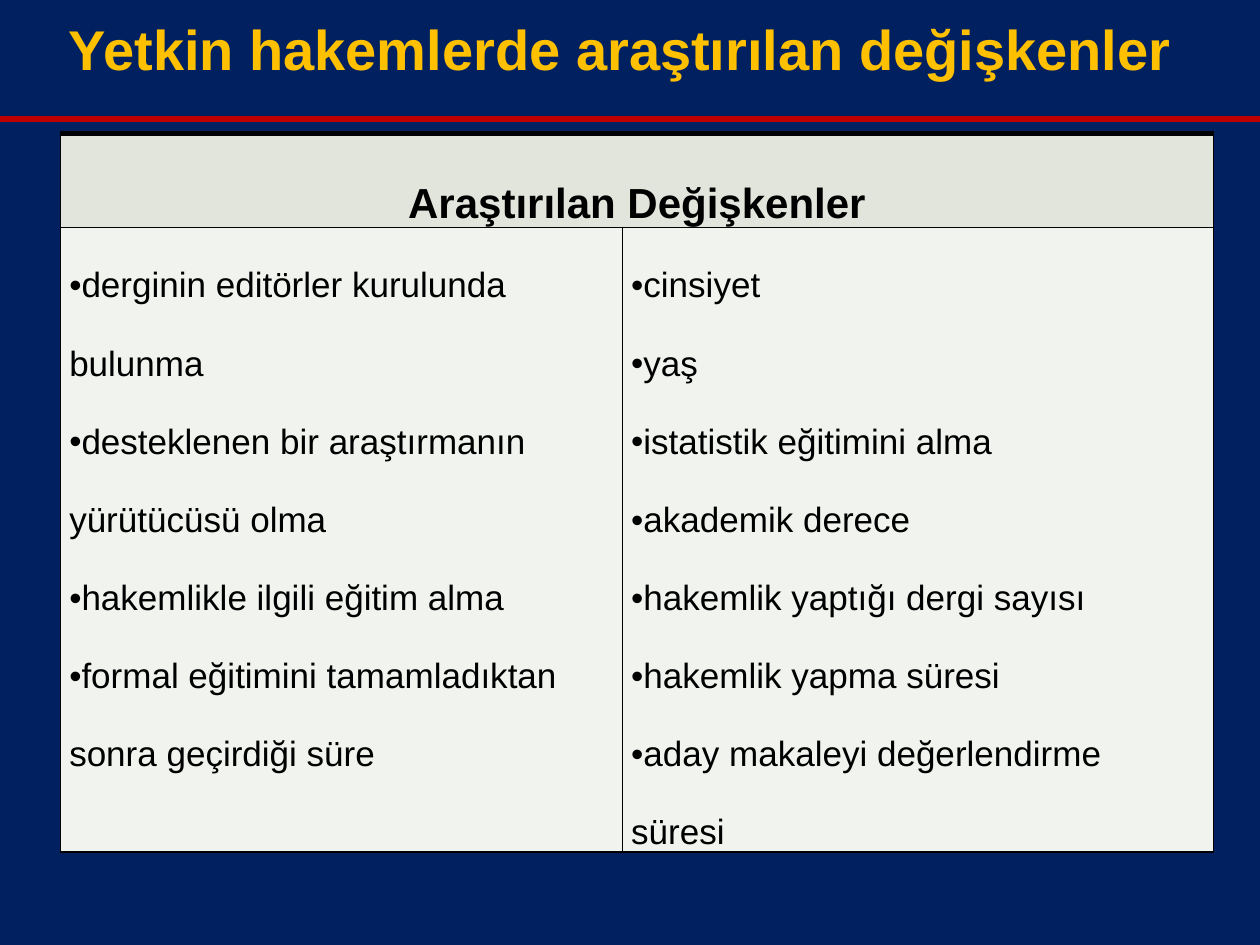
from dataclasses import dataclass

from lxml.etree import SubElement
from pptx import Presentation
from pptx.dml.color import RGBColor
from pptx.enum.shapes import MSO_SHAPE as Shape
from pptx.enum.text import MSO_ANCHOR as Anchor, PP_ALIGN as Align
from pptx.oxml import parse_xml
from pptx.oxml.ns import nsdecls, qn
from pptx.util import Inches, Pt


@dataclass(frozen=True)
class Theme:
    font: str = "Arial"
    background: str = "002060"
    title: str = "FFC000"
    rule: str = "C00000"
    text: str = "000000"
    header_fill: str = "E1E5DC"
    body_fill: str = "F0F3EE"
    title_size: int = 32
    header_size: int = 24
    body_size: int = 20


THEME = Theme()

TITLE = "Yetkin hakemlerde araştırılan değişkenler"
HEADER = "Araştırılan Değişkenler"
VARIABLES = [
    [
        "derginin editörler kurulunda bulunma",
        "desteklenen bir araştırmanın yürütücüsü olma",
        "hakemlikle ilgili eğitim alma",
        "formal eğitimini tamamladıktan sonra geçirdiği süre",
    ],
    [
        "cinsiyet",
        "yaş",
        "istatistik eğitimini alma",
        "akademik derece",
        "hakemlik yaptığı dergi sayısı",
        "hakemlik yapma süresi",
        "aday makaleyi değerlendirme süresi",
    ],
]


def apply(target, values):
    for name, value in values.items():
        setattr(target, name, value)


def write(p, text, size, color, bold=False):
    r = p.add_run()
    r.text = text
    apply(r.font, dict(name=THEME.font, size=Pt(size), bold=bold))
    r.font.color.rgb = RGBColor.from_string(color)


def add_bullet(p):
    pPr = p._p.get_or_add_pPr()
    pPr.set("marL", "0")
    pPr.set("indent", "0")
    SubElement(pPr, qn("a:buFont")).set("typeface", THEME.font)
    SubElement(pPr, qn("a:buChar")).set("char", "•")


def set_borders(cell, top=1):
    tcPr = cell._tc.get_or_add_tcPr()
    widths = dict(lnL=1, lnR=1, lnT=top, lnB=1)
    for i, (side, width) in enumerate(widths.items()):
        tcPr.insert(i, parse_xml(
            f'<a:{side} {nsdecls("a")} w="{Pt(width)}"><a:solidFill>'
            f'<a:srgbClr val="{THEME.text}"/></a:solidFill></a:{side}>'))


def format_cell(cell, fill, top=1):
    apply(cell, dict(margin_left=Inches(0.07), margin_right=Inches(0.07),
                     margin_top=0, margin_bottom=0))
    cell.fill.solid()
    cell.fill.fore_color.rgb = RGBColor.from_string(fill)
    set_borders(cell, top)


def add_title(s, x, y, w, h):
    tf = s.shapes.add_textbox(x, y, w, h).text_frame
    apply(tf, dict(word_wrap=True, vertical_anchor=Anchor.MIDDLE))
    p = tf.paragraphs[0]
    p.alignment = Align.CENTER
    write(p, TITLE, THEME.title_size, THEME.title, bold=True)


def add_rule(s, x, y, w, h):
    sp = s.shapes.add_shape(Shape.MATH_MINUS, x, y, w, h)
    sp.shadow.inherit = False
    sp.fill.solid()
    for color in (sp.fill.fore_color, sp.line.color):
        color.rgb = RGBColor.from_string(THEME.rule)
    sp.line.width = Pt(2)


def add_variables(s, x, y, w, h):
    table = s.shapes.add_table(2, 2, x, y, w, h).table
    for column, width in zip(table.columns, (4.46, 4.69)):
        column.width = Inches(width)
    for row, height in zip(table.rows, (0.59, 3.99)):
        row.height = Inches(height)

    # Header across both columns
    header = table.cell(0, 0)
    header.merge(table.cell(0, 1))
    for i in range(2):
        format_cell(table.cell(0, i), THEME.header_fill, top=3)
    p = header.text_frame.paragraphs[0]
    apply(p, dict(alignment=Align.CENTER, line_spacing=2.0))
    write(p, HEADER, THEME.header_size, THEME.text, bold=True)

    # One bulleted list per column
    for i, items in enumerate(VARIABLES):
        cell = table.cell(1, i)
        format_cell(cell, THEME.body_fill)
        tf = cell.text_frame
        for n, item in enumerate(items):
            p = tf.add_paragraph() if n else tf.paragraphs[0]
            p.line_spacing = 2.0
            add_bullet(p)
            write(p, item, THEME.body_size, THEME.text)


def main():
    prs = Presentation()
    apply(prs, dict(slide_width=Inches(10), slide_height=Inches(7.5)))
    s = prs.slides.add_slide(prs.slide_layouts[6])
    s.background.fill.solid()
    s.background.fill.fore_color.rgb = RGBColor.from_string(THEME.background)

    add_variables(s, Inches(0.48), Inches(1.06), Inches(9.15), Inches(4.58))
    add_title(s, Inches(0.12), Inches(-0.24), Inches(9.61), Inches(1.25))
    add_rule(s, Inches(-1.81), Inches(0.9), Inches(13.62), Inches(0.09))
    prs.save("out.pptx")


if __name__ == "__main__":
    main()
